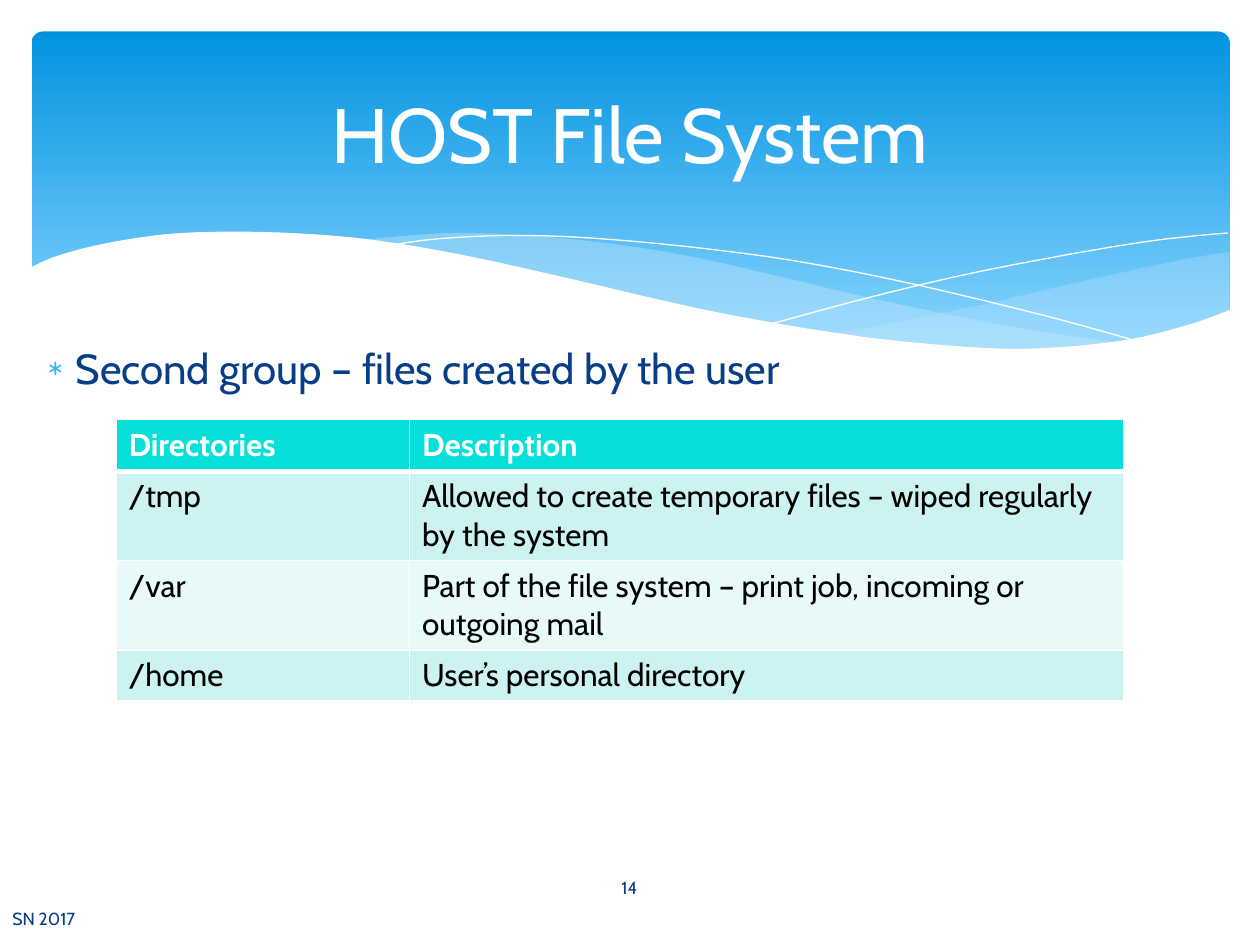
import pptx
import pptx.dml.color
import pptx.enum.shapes
import pptx.enum.text
import pptx.oxml
import pptx.util
from pptx.util import Inches

NS = 'xmlns:a="http://schemas.openxmlformats.org/drawingml/2006/main"'
FONT, WHITE, NAVY, PALE = "Cabin", "FFFFFF", "073E87", "C6E7FC"


def colour(hex_text):
    return pptx.dml.color.RGBColor.from_string(hex_text)


def smooth(knots, steps=6):
    """Points of a Catmull-Rom curve through the knots, in thousandths of an inch."""
    padded = [knots[0], *knots, knots[-1]]
    points = []
    for a, b, c, d in zip(padded, padded[1:], padded[2:], padded[3:]):
        for t in (step / steps for step in range(steps)):
            points.append(tuple(
                500 * (2 * q + (r - p) * t + (2 * p - 5 * q + 4 * r - s) * t**2
                       + (3 * q - p - 3 * r + s) * t**3)
                for p, q, r, s in zip(a, b, c, d)))
    return points + [(knots[-1][0] * 1000, knots[-1][1] * 1000)]


deck = pptx.Presentation()
deck.slide_width, deck.slide_height = Inches(10), Inches(7.5)
page = deck.slides.add_slide(deck.slide_layouts[1])
title, body = page.placeholders

# Blue gradient band
band = page.shapes.add_shape(
    pptx.enum.shapes.MSO_SHAPE.ROUNDED_RECTANGLE,
    Inches(0.25), Inches(0.25), Inches(9.51), Inches(2.7))
band.adjustments[0] = 0.034
band.shadow.inherit = False
band.line.fill.background()
band.fill.gradient()
band.fill.gradient_angle = 270
for stop, position, shade in zip(band.fill.gradient_stops, (0, 0.9), ("0293E0", "83D3FE")):
    stop.position = position
    stop.color.rgb = colour(shade)

# Waves: curves joined end to end, fill colour (None for a line), opacity in percent
waves = [
    ([[(9.76, 2), (9.35, 2.07), (8.61, 2.23), (7.79, 2.42), (7.06, 2.57), (6.61, 2.65)],
      [(6.61, 2.65), (7.05, 2.71), (7.57, 2.76), (8.14, 2.78), (8.72, 2.74),
       (9.28, 2.63), (9.76, 2.47)]], PALE, 29),
    ([[(8.93, 2.73), (8.07, 2.6), (7.06, 2.4), (6.29, 2.22), (5.55, 2.05), (4.89, 1.94),
       (4.2, 1.87), (3.61, 1.85), (3.13, 1.88), (2.86, 1.91)],
      [(2.86, 1.91), (3.62, 2.03), (4.49, 2.22), (5.3, 2.4), (6.01, 2.55), (6.65, 2.66),
       (7.22, 2.74), (7.85, 2.78), (8.38, 2.78), (8.93, 2.73)]], PALE, 40),
    ([[(3.09, 1.95), (3.44, 1.9), (4.01, 1.87), (4.69, 1.89), (5.56, 1.97), (6.36, 2.08),
       (7.27, 2.26), (8.31, 2.51), (9.07, 2.72)]], None, 100),
    ([[(6.13, 2.57), (6.95, 2.35), (7.76, 2.16), (8.66, 1.99), (9.24, 1.9), (9.75, 1.85)]],
     None, 100),
    ([[(9.77, 2.46), (9.4, 2.59), (8.87, 2.71), (8.09, 2.77), (7.26, 2.72), (6.48, 2.62),
       (5.55, 2.45), (4.47, 2.2), (3.65, 2.02), (2.92, 1.9), (2.3, 1.85), (1.77, 1.84),
       (1.32, 1.86), (0.85, 1.93), (0.46, 2.03), (0.23, 2.13)],
      [(0.23, 3.29), (9.77, 3.29)]], WHITE, 100),
]
for curves, shade, opacity in waves:
    points = [point for knots in curves for point in smooth(knots)]
    builder = page.shapes.build_freeform(*points[0], scale=Inches(0.001))
    builder.add_line_segments(points[1:], close=shade is not None)
    wave = builder.convert_to_shape()
    wave.shadow.inherit = False
    if shade is None:
        wave.fill.background()
        wave.line.color.rgb = colour(WHITE)
        wave.line.width = 0
        continue
    wave.line.fill.background()
    wave.fill.solid()
    wave.fill.fore_color.rgb = colour(shade)
    if opacity < 100:
        wave.element.spPr.find(".//{*}solidFill/{*}srgbClr").append(
            pptx.oxml.parse_xml(f'<a:alpha {NS} val="{opacity * 1000}"/>'))

# Title, bulleted body, slide number and footer, in front of the waves
page.shapes.element.extend([body.element, title.element])
number, footer = [page.shapes.add_textbox(0, 0, 0, 0) for _ in range(2)]
CENTER, LEFT = pptx.enum.text.PP_ALIGN.CENTER, pptx.enum.text.PP_ALIGN.LEFT
MIDDLE, TOP = pptx.enum.text.MSO_ANCHOR.MIDDLE, pptx.enum.text.MSO_ANCHOR.TOP
for box, place, text, size, shade, align, anchor in [
    (title, (0.5, 0.37, 9, 1.37), "HOST File System", 44, WHITE, CENTER, MIDDLE),
    (body, (0.17, 2.67, 9.5, 3.94), "Second group – files created by the user",
     24, NAVY, LEFT, TOP),
    (number, (4.36, 6.84, 1.27, 0.4), "14", 10, NAVY, CENTER, MIDDLE),
    (footer, (0, 7.09, 4.14, 0.4), "SN 2017", 10, NAVY, LEFT, MIDDLE),
]:
    box.left, box.top, box.width, box.height = map(Inches, place)
    frame = box.text_frame
    frame.text = text
    frame.word_wrap = True
    frame.vertical_anchor = anchor
    para = frame.paragraphs[0]
    para.alignment = align
    para.font.name, para.font.size = FONT, pptx.util.Pt(size)
    para.font.color.rgb = colour(shade)

bullet = body.text_frame.paragraphs[0]
bullet.space_before = pptx.util.Pt(4.8)
settings = bullet._p.get_or_add_pPr()
settings.set("marL", str(Inches(0.33)))
settings.set("indent", str(Inches(-0.23)))
for part in ('<a:buClr {}><a:srgbClr val="31B6FD"/></a:buClr>', '<a:buSzPct {} val="50000"/>',
             '<a:buFont {} typeface="Cabin"/>', '<a:buChar {} char="∗"/>'):
    settings.insert_element_before(
        pptx.oxml.parse_xml(part.format(NS)), "a:tabLst", "a:defRPr", "a:extLst")

# Directory table
rows = [
    ("Directories", "Description"),
    ("/tmp", "Allowed to create temporary files – wiped regularly by the system"),
    ("/var", "Part of the file system – print job, incoming or outgoing mail"),
    ("/home", "User’s personal directory"),
]
row_fills = ["05E0DB", "CCF3F1", "E7F9F8", "CCF3F1"]
table = page.shapes.add_table(
    4, 2, Inches(0.92), Inches(3.33), Inches(8), Inches(2.21)).table
for column, width in zip(table.columns, (2.33, 5.67)):
    column.width = Inches(width)
for row, height in zip(table.rows, (0.41, 0.71, 0.71, 0.4)):
    row.height = Inches(height)
for r, texts in enumerate(rows):
    for c, text in enumerate(texts):
        cell = table.cell(r, c)
        cell.text = text
        font = cell.text_frame.paragraphs[0].font
        font.name, font.size, font.bold = FONT, pptx.util.Pt(18), r == 0
        font.color.rgb = colour(WHITE if r == 0 else "000000")
        for side in "LRTB":
            thick = (r, side) in ((0, "B"), (1, "T"))
            cell._tc.get_or_add_tcPr().append(pptx.oxml.parse_xml(
                f'<a:ln{side} {NS} w="{pptx.util.Pt(3 if thick else 1)}"><a:solidFill>'
                f'<a:srgbClr val="{WHITE}"/></a:solidFill></a:ln{side}>'))
        cell.fill.solid()
        cell.fill.fore_color.rgb = colour(row_fills[r])

deck.save("out.pptx")
